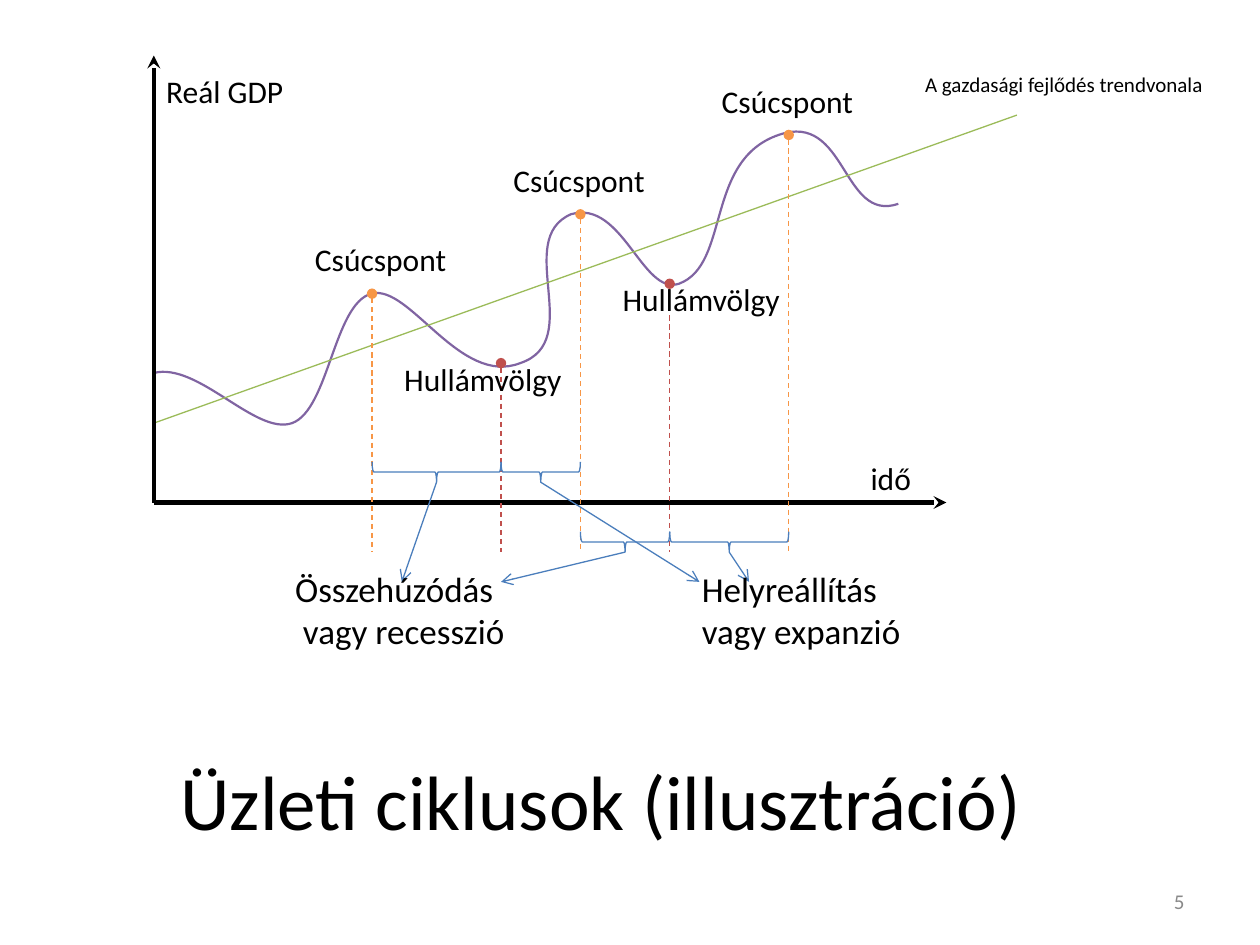
import pptx
import pptx.dml.color
import pptx.enum.dml
import pptx.enum.shapes
import pptx.enum.text
import pptx.oxml.ns
import pptx.util
from lxml import etree

Cm = pptx.util.Cm
Pt = pptx.util.Pt
qn = pptx.oxml.ns.qn
BLACK, BLUE, GREEN = "000000", "4B7EBC", "9BBB59"
ORANGE, RED, PURPLE, GREY = "F79646", "C0504D", "8064A2", "898989"


def color(code):
    return pptx.dml.color.RGBColor.from_string(code)


def add_xml(parent, tag, **attrs):
    return etree.SubElement(parent, qn(tag), attrs)


def write(frame, text, size=18, fill=BLACK, font="Calibri",
          align="LEFT", anchor="TOP", fit="NONE"):
    frame.word_wrap = True
    frame.auto_size = getattr(pptx.enum.text.MSO_AUTO_SIZE, fit)
    frame.vertical_anchor = getattr(pptx.enum.text.MSO_ANCHOR, anchor)
    frame.text = text
    for par in frame.paragraphs:
        par.alignment = getattr(pptx.enum.text.PP_ALIGN, align)
        for run in par.runs:
            run.font.size = Pt(size)
            run.font.name = font
            run.font.color.rgb = color(fill)


def bend(shape):
    """Turn every three straight segments into one cubic curve."""
    lines = list(shape._element.iter(qn("a:lnTo")))
    for i in range(0, len(lines), 3):
        cubic = etree.Element(qn("a:cubicBezTo"))
        lines[i].addprevious(cubic)
        for line in lines[i:i + 3]:
            cubic.append(line[0])
            line.getparent().remove(line)


class Board:
    def __init__(self, slide, thin=0.75):
        self.slide = slide
        self.shapes = slide.shapes
        self.thin = thin

    def stroke(self, shape, code, width):
        shape.line.color.rgb = color(code)
        shape.line.width = Pt(width)

    def hollow(self, shape, code, width):
        shape.shadow.inherit = False
        shape.fill.background()
        self.stroke(shape, code, width)

    def title(self, text, x, y, w, h):
        shape = self.shapes.title
        shape.left, shape.top, shape.width, shape.height = map(Cm, (x, y, w, h))
        write(shape.text_frame, text, size=44, align="CENTER", anchor="MIDDLE")

    def label(self, text, x, y, w, h=1.02, fit="SHAPE_TO_FIT_TEXT", **style):
        box = self.shapes.add_textbox(Cm(x), Cm(y), Cm(w), Cm(h))
        write(box.text_frame, text, fit=fit, **style)

    def line(self, start, end, code, width=None, dash=False, head=None, tail=None):
        line = self.shapes.add_connector(
            pptx.enum.shapes.MSO_CONNECTOR.STRAIGHT, *map(Cm, start + end))
        self.stroke(line, code, width or self.thin)
        if dash:
            line.line.dash_style = pptx.enum.dml.MSO_LINE.DASH
        ln = line.line._get_or_add_ln()
        for tag, kind in (("a:headEnd", head), ("a:tailEnd", tail)):
            if kind:
                add_xml(ln, tag, type=kind)
        add_xml(line._element.spPr, "a:effectLst")

    def curve(self, start, curves, code, width):
        build = self.shapes.build_freeform(*map(Cm, start), scale=1.0)
        points = [(Cm(x), Cm(y)) for part in curves for x, y in part]
        build.add_line_segments(points, close=False)
        shape = build.convert_to_shape()
        bend(shape)
        self.hollow(shape, code, width)

    def brace(self, left, right, bottom, depth=0.41):
        """Draw a brace that spans left to right and points down."""
        span = right - left
        x, y = (left + right - depth) / 2, bottom - (depth + span) / 2
        shape = self.shapes.add_shape(
            pptx.enum.shapes.MSO_SHAPE.RIGHT_BRACE, Cm(x), Cm(y), Cm(depth), Cm(span))
        shape.rotation = 90
        self.hollow(shape, BLUE, self.thin)


def main():
    deck = pptx.Presentation()
    deck.slide_width, deck.slide_height = Cm(25.4), Cm(19.05)
    board = Board(deck.slides.add_slide(deck.slide_layouts[5]))

    cycle = [
        ((3.99, 7.29), (5.16, 8.79), (5.89, 8.53)),
        ((6.63, 8.26), (6.73, 6.12), (7.49, 5.92)),
        ((8.26, 5.72), (9.27, 7.8), (10.49, 7.32)),
        ((11.81, 6.88), (10.34, 4.83), (11.51, 4.32)),
        ((12.55, 4.01), (12.95, 5.97), (13.69, 5.72)),
        ((14.73, 5.33), (14.2, 3.23), (15.7, 2.72)),
        ((17.07, 2.24), (16.97, 4.5), (18.11, 4.11)),
    ]
    board.curve((3.1, 7.52), cycle, PURPLE, 1.25)
    board.line((3.1, 8.53), (20.5, 2.32), GREEN)
    origin = (3.1, 10.13)
    for end in ((3.1, 1.12), (19.08, 10.13)):
        board.line(origin, end, BLACK, width=2.5, tail="stealth")

    turns = [(7.5, 5.92), (10.1, 7.32), (11.7, 4.32), (13.5, 5.72), (15.9, 2.72)]
    for i, (x, y) in enumerate(turns):
        board.line((x, y), (x, 11.13), RED if i % 2 else ORANGE, dash=True, head="oval")

    bottoms = (9.72, 9.72, 11.13, 11.13)
    targets = (8.1, 14.1, 10.1, 15.1)
    for (left, _), (right, _), low, goal in zip(turns, turns[1:], bottoms, targets):
        board.brace(left, right, low)
        board.line(((left + right) / 2, low), (goal, 11.73), BLUE, tail="arrow")

    for x, y in ((6.1, 4.72), (10.1, 3.12), (14.3, 1.52)):
        board.label("Csúcspont", x, y, 3.2)
    for x, y in ((7.9, 7.13), (12.3, 5.53)):
        board.label("Hullámvölgy", x, y, 3.81)
    board.label("Összehúzódás\n vagy recesszió", 5.7, 11.32, 5, 1.96, size=20)
    board.label("Helyreállítás\nvagy expanzió", 13.9, 11.32, 7.8, 1.96, size=20)
    board.label("A gazdasági fejlődés trendvonala", 18.4, 1.32, 7, 0.76, size=12)
    board.label("idő", 17.3, 9.12, 3.2)
    board.label("Reál GDP", 3.1, 1.32, 4.19)
    board.title("Üzleti ciklusok (illusztráció)", 0.69, 14.53, 22.86, 3.18)
    board.label("5", 18.21, 17.65, 5.92, fit="NONE", size=12, fill=GREY,
                align="RIGHT", anchor="MIDDLE")
    deck.save("out.pptx")


if __name__ == "__main__":
    main()
